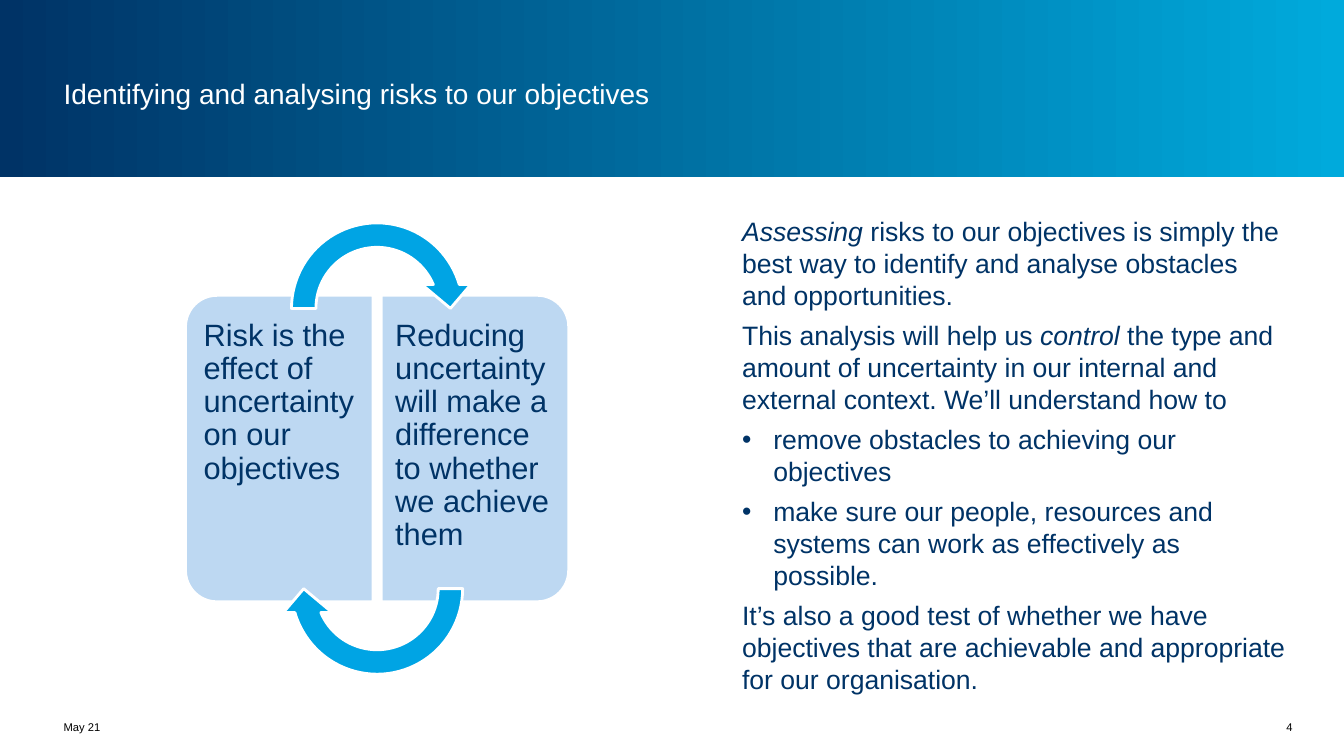
from pptx import Presentation, util as u
from pptx.dml.color import RGBColor
from pptx.enum import shapes, text
from lxml import etree

# Content: "*" switches italics on and off, a leading "•" makes a bullet
TITLE = "Identifying and analysing risks to our objectives"
DATE, PAGE = "May 21", "4"
EXPLANATION = [
    "*Assessing* risks to our objectives is simply the best way to identify "
    "and analyse obstacles and opportunities.",
    "This analysis will help us *control* the type and amount of uncertainty "
    "in our internal and external context. We’ll understand how to",
    "•remove obstacles to achieving our objectives",
    "•make sure our people, resources and systems can work as effectively as possible.",
    "It’s also a good test of whether we have objectives that are achievable "
    "and appropriate for our organisation.",
]
CYCLE = [
    "Risk is the effect of uncertainty on our objectives",
    "Reducing uncertainty will make a difference to whether we achieve them",
]

NAVY = RGBColor(0x00, 0x33, 0x66)
CYAN = RGBColor(0x00, 0xAA, 0xDC)
ARROW_BLUE = RGBColor(0x00, 0xA4, 0xE4)
PALE_BLUE = RGBColor(0xBD, 0xD8, 0xF2)
WHITE = RGBColor(0xFF, 0xFF, 0xFF)
BLACK = RGBColor(0, 0, 0)

# Layout in inches
WIDTH, HEIGHT = 13.33, 7.5
MARGIN = 0.59
FOOTER_TOP, FOOTER_HEIGHT = 7.09, 0.24
CENTRE_X, CENTRE_Y = 3.74, 4.45
PANEL_WIDTH, PANEL_HEIGHT, PANEL_STEP = 1.86, 3.04, 1.94
LABEL_WIDTH, LABEL_HEIGHT, LABEL_STEP = 1.77, 2.86, 1.85
ARROW_SIZE, ARROW_STEP = 1.94, 2.78
ARROW_BEND = (0.125, 11.42, 204.58, 108, 0.125)

deck = Presentation()
deck.slide_width, deck.slide_height = u.Inches(WIDTH), u.Inches(HEIGHT)
slide = deck.slides.add_slide(deck.slide_layouts[6])


def centred(x, y, width, height):
    return x - width / 2, y - height / 2, width, height


def add_bullet(paragraph, indent=0.31):
    props = paragraph._p.get_or_add_pPr()
    props.set("marL", str(u.Inches(indent)))
    props.set("indent", str(-u.Inches(indent)))
    ns = props.nsmap["a"]
    etree.SubElement(props, f"{{{ns}}}buFont", typeface="Arial")
    etree.SubElement(props, f"{{{ns}}}buChar", char="•")


def add_text(lines, box, size, color=NAVY, align=text.PP_ALIGN.LEFT,
             anchor=text.MSO_ANCHOR.TOP, insets=(0.04,) * 4, after=None, spacing=None):
    frame = slide.shapes.add_textbox(*map(u.Inches, box)).text_frame
    frame.word_wrap = True
    frame.vertical_anchor = anchor
    (frame.margin_left, frame.margin_top,
     frame.margin_right, frame.margin_bottom) = map(u.Inches, insets)
    for number, line in enumerate(lines):
        paragraph = frame.paragraphs[0] if number == 0 else frame.add_paragraph()
        paragraph.alignment = align
        if after is not None:
            paragraph.space_after = u.Pt(after)
        if spacing is not None:
            paragraph.line_spacing = spacing
        if line.startswith("•"):
            add_bullet(paragraph)
        for part, words in enumerate(line.lstrip("•").split("*")):
            if words:
                run = paragraph.add_run()
                run.text = words
                run.font.name, run.font.size = "Arial", u.Pt(size)
                run.font.color.rgb = color
                run.font.italic = part % 2 == 1


def add_shape(kind, box, fill=None, rotation=0, adjustments=()):
    shape = slide.shapes.add_shape(kind, *map(u.Inches, box))
    shape.shadow.inherit = False
    shape.rotation = rotation
    for index, value in enumerate(adjustments):
        shape.adjustments[index] = value
    if fill is None:
        shape.line.fill.background()
    else:
        shape.fill.solid()
        shape.fill.fore_color.rgb = fill
        shape.line.color.rgb = WHITE
        shape.line.width = u.Pt(2)
    return shape


# Header band
band = add_shape(shapes.MSO_SHAPE.RECTANGLE, (0, 0, WIDTH, 1.76))
band.fill.gradient()
band.fill.gradient_angle = 0
for stop, stop_color in zip(band.fill.gradient_stops, (NAVY, CYAN)):
    stop.color.rgb = stop_color
add_text([TITLE], (MARGIN, 0.3, 9.97, 1.26), 20, WHITE, anchor=text.MSO_ANCHOR.MIDDLE)

# Footer
add_text([DATE], (MARGIN, FOOTER_TOP, 2.1, FOOTER_HEIGHT), 8, BLACK,
         anchor=text.MSO_ANCHOR.MIDDLE)
add_text([PAGE], (11.81, FOOTER_TOP, 1.05, FOOTER_HEIGHT), 8, BLACK,
         align=text.PP_ALIGN.RIGHT, anchor=text.MSO_ANCHOR.MIDDLE)

# Explanation
add_text(EXPLANATION, (7.32, 2.09, 5.51, 5), 19, after=6)

# Cycle panels, turned so that their round corners face outwards
for side, label, turn, insets in zip((-0.5, 0.5), CYCLE, (270, 90),
                                     ((0.09, 0.15, 0.14, 0.15), (0.14, 0.15, 0.09, 0.15))):
    add_shape(shapes.MSO_SHAPE.ROUND_2_SAME_RECTANGLE,
              centred(CENTRE_X + side * PANEL_STEP, CENTRE_Y, PANEL_HEIGHT, PANEL_WIDTH),
              PALE_BLUE, turn, (0.167, 0))
    add_text([label],
             centred(CENTRE_X + side * LABEL_STEP, CENTRE_Y, LABEL_WIDTH, LABEL_HEIGHT),
             22, insets=insets, spacing=0.9)

# Cycle arrows above and below the panels
for side, turn in ((-0.5, 0), (0.5, 180)):
    add_shape(shapes.MSO_SHAPE.CIRCULAR_ARROW,
              centred(CENTRE_X, CENTRE_Y + side * ARROW_STEP, ARROW_SIZE, ARROW_SIZE),
              ARROW_BLUE, turn, ARROW_BEND)

deck.save("out.pptx")
